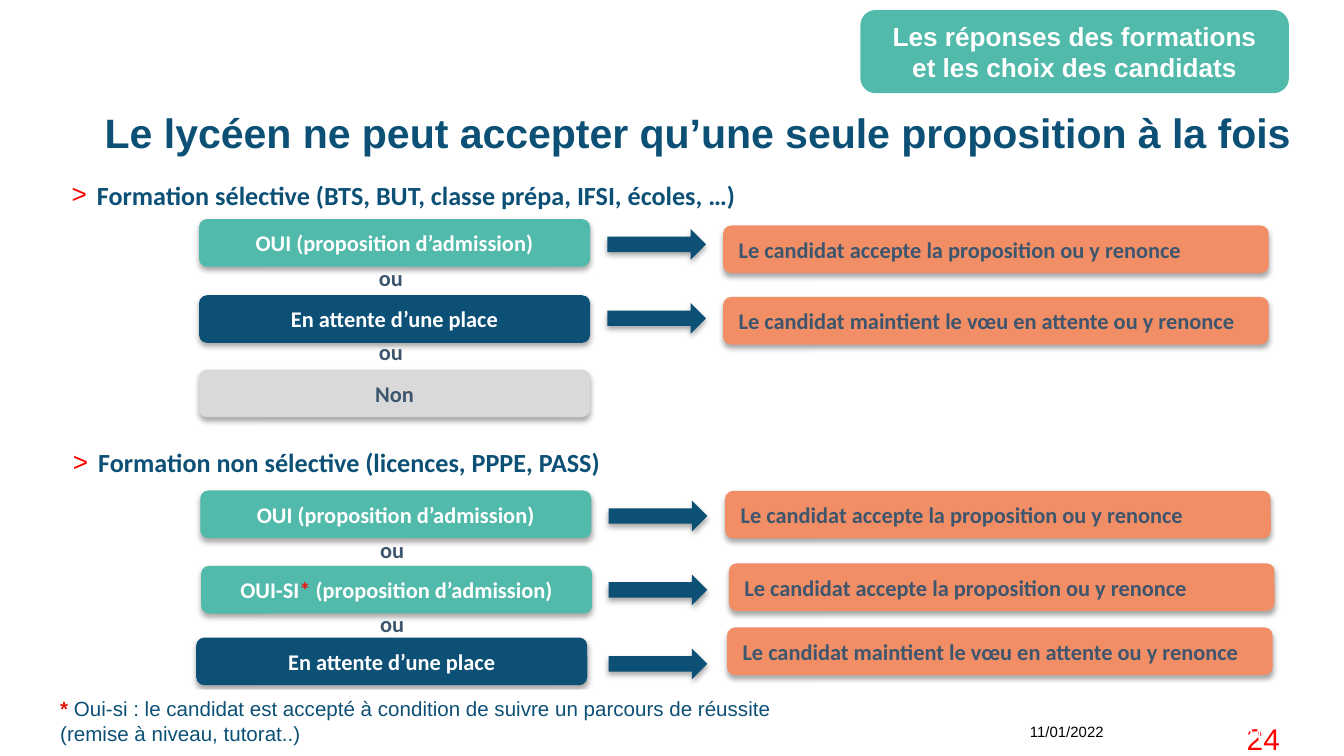
from lxml.etree import SubElement
from pptx import Presentation
from pptx.dml.color import RGBColor
from pptx.enum.shapes import MSO_SHAPE
from pptx.enum.text import MSO_ANCHOR, PP_ALIGN
from pptx.oxml.ns import qn
from pptx.util import Pt

NAVY = RGBColor(0x0C, 0x50, 0x76)
TEAL = RGBColor(0x51, 0xBA, 0xAA)
CORAL = RGBColor(0xF2, 0x8E, 0x65)
GREY = RGBColor(0xD9, 0xD9, 0xD9)
SLATE = RGBColor(0x3D, 0x56, 0x6E)
RED = RGBColor(0xFF, 0x00, 0x00)
STAR = RGBColor(0xEC, 0x13, 0x0E)
WHITE = RGBColor(0xFF, 0xFF, 0xFF)
BLACK = RGBColor(0x00, 0x00, 0x00)

YES = "OUI (proposition d’admission)"
WAIT = "En attente d’une place"
TAKE = "Le candidat accepte la proposition ou y renonce"
KEEP = "Le candidat maintient le vœu en attente ou y renonce"
PITCH = 39.6  # between two arrows or two "ou"


def style(font, size, color, bold=True, name="Calibri"):
    font.name, font.size, font.bold = name, Pt(size), bold
    font.color.rgb = color


def write(shape, words, size, color, align=PP_ALIGN.LEFT, bold=True,
          name="Calibri", anchor=MSO_ANCHOR.TOP):
    """Fill a shape with text; every asterisk is set in red."""
    frame = shape.text_frame
    frame.word_wrap = True
    frame.vertical_anchor = anchor
    for i, line in enumerate(words.split("\n")):
        para = frame.add_paragraph() if i else frame.paragraphs[0]
        para.alignment = align
        for part in line.replace("*", "|*|").split("|"):
            if part:
                run = para.add_run()
                run.text = part
                star = part == "*"
                style(run.font, size, STAR if star else color,
                      bold or star, name)
    return frame


def label(slide, box, *args, **opts):
    return write(slide.shapes.add_textbox(*map(Pt, box)), *args, **opts)


def block(slide, kind, box, fill):
    shape = slide.shapes.add_shape(kind, *map(Pt, box))
    shape.shadow.inherit = False
    shape.fill.solid()
    shape.fill.fore_color.rgb = fill
    shape.line.fill.background()
    return shape


def shade(shape):
    """Soft shadow straight below the shape."""
    effects = shape.element.spPr.find(qn("a:effectLst"))
    outer = SubElement(effects, qn("a:outerShdw"), blurRad=str(Pt(3.1)),
                       dist=str(Pt(1.8)), dir="5400000", rotWithShape="0")
    tint = SubElement(outer, qn("a:srgbClr"), val="000000")
    SubElement(tint, qn("a:alpha"), val="35000")
    return shape


def card(slide, box, words, fill, ink, align):
    shape = shade(block(slide, MSO_SHAPE.ROUNDED_RECTANGLE, box, fill))
    write(shape, words, 12, ink, align, anchor=MSO_ANCHOR.MIDDLE)


def heading(slide, box, words):
    para = label(slide, box, words, 14, NAVY).paragraphs[0]
    props = para._p.get_or_add_pPr()
    props.set("marL", str(Pt(13.5)))
    props.set("indent", str(-Pt(13.5)))
    tint = SubElement(props, qn("a:buClr"))
    SubElement(tint, qn("a:srgbClr"), val=str(RED))
    SubElement(props, qn("a:buFont"), typeface="Arial")
    SubElement(props, qn("a:buChar"), char=">")


def group(slide, left, top, title, first, states, replies):
    """One kind of course: its states, arrows and the replies to them.

    first is the offset of the first "ou"; states and replies hold
    their own offsets from the group corner.
    """
    heading(slide, (left - 75.3, top, 650, 30), title)
    for dx, dy, words, fill, ink in states:
        card(slide, (left + dx, top + dy, 209.5, 25.5), words, fill, ink,
             PP_ALIGN.CENTER)
    for i in range(len(states) - 1):
        label(slide, (left + 89.3, top + first + i * PITCH, 55.4, 21.6),
              "ou", 12, SLATE)
    for i, (dx, dy, words) in enumerate(replies):
        spot = (left + 218.8, top + first - 15.5 + i * PITCH, 52.8, 16.5)
        shade(block(slide, MSO_SHAPE.RIGHT_ARROW, spot, NAVY))
        card(slide, (left + dx, top + dy, 292.3, 25.5), words, CORAL, SLATE,
             PP_ALIGN.LEFT)


def header(slide, left, top):
    # Section banner
    shape = block(slide, MSO_SHAPE.ROUNDED_RECTANGLE,
                  (left + 434, top, 227.5, 42.5), TEAL)
    shape.line.color.rgb = TEAL
    shape.line.width = Pt(2)
    write(shape, "Les réponses des formations et les choix des candidats",
          14, WHITE, PP_ALIGN.CENTER, name="Arial", anchor=MSO_ANCHOR.MIDDLE)
    # Slide title
    frame = label(slide, (left, top + 54, 692, 35),
                  "Le lycéen ne peut accepter qu’une seule proposition à la fois",
                  22, NAVY, PP_ALIGN.CENTER, name="Arial")
    frame.margin_left = frame.margin_right = 0
    frame.margin_top = frame.margin_bottom = 0
    frame.paragraphs[0].line_spacing = 0.9


def footer(slide, left, top):
    # Footnote
    note = block(slide, MSO_SHAPE.RECTANGLE, (left, top, 448, 34), WHITE)
    write(note, "* Oui-si : le candidat est accepté à condition de suivre "
          "un parcours de réussite\n(remise à niveau, tutorat..)",
          11, NAVY, bold=False, name="Arial")
    # Date and page numbers
    label(slide, (left + 481, top + 14.4, 92.2, 28), "11/01/2022", 8, BLACK,
          PP_ALIGN.RIGHT, bold=False, name="Arial")
    label(slide, (left + 575.3, top + 13, 92.2, 28), "24", 16, RED,
          PP_ALIGN.RIGHT, bold=False, name="Arial")
    label(slide, (left + 631.5, top + 13, 29.5, 21), "24", 9, WHITE,
          PP_ALIGN.CENTER, anchor=MSO_ANCHOR.MIDDLE)


def main():
    deck = Presentation()
    deck.slide_width, deck.slide_height = Pt(720), Pt(405)
    slide = deck.slides.add_slide(deck.slide_layouts[6])
    header(slide, 28, 6.4)
    group(slide, 106.6, 92.4,
          "Formation sélective (BTS, BUT, classe prépa, IFSI, écoles, …)", 45.8,
          [(0, 25, YES, TEAL, WHITE),
           (0, 65.8, WAIT, NAVY, WHITE),
           (0, 105.6, "Non", GREY, SLATE)],
          [(280.8, 28.4, TAKE), (280.8, 66.7, KEEP)])
    group(slide, 107.3, 235.8,
          "Formation non sélective (licences, PPPE, PASS)", 47.9,
          [(0, 27, YES, TEAL, WHITE),
           (0.4, 67.4, "OUI-SI* (proposition d’admission)", TEAL, WHITE),
           (-2.2, 105.8, WAIT, NAVY, WHITE)],
          [(281.2, 27.2, TAKE), (283.2, 66, TAKE), (282.2, 100.4, KEEP)])
    footer(slide, 25.2, 369.4)
    deck.save("out.pptx")


if __name__ == "__main__":
    main()
